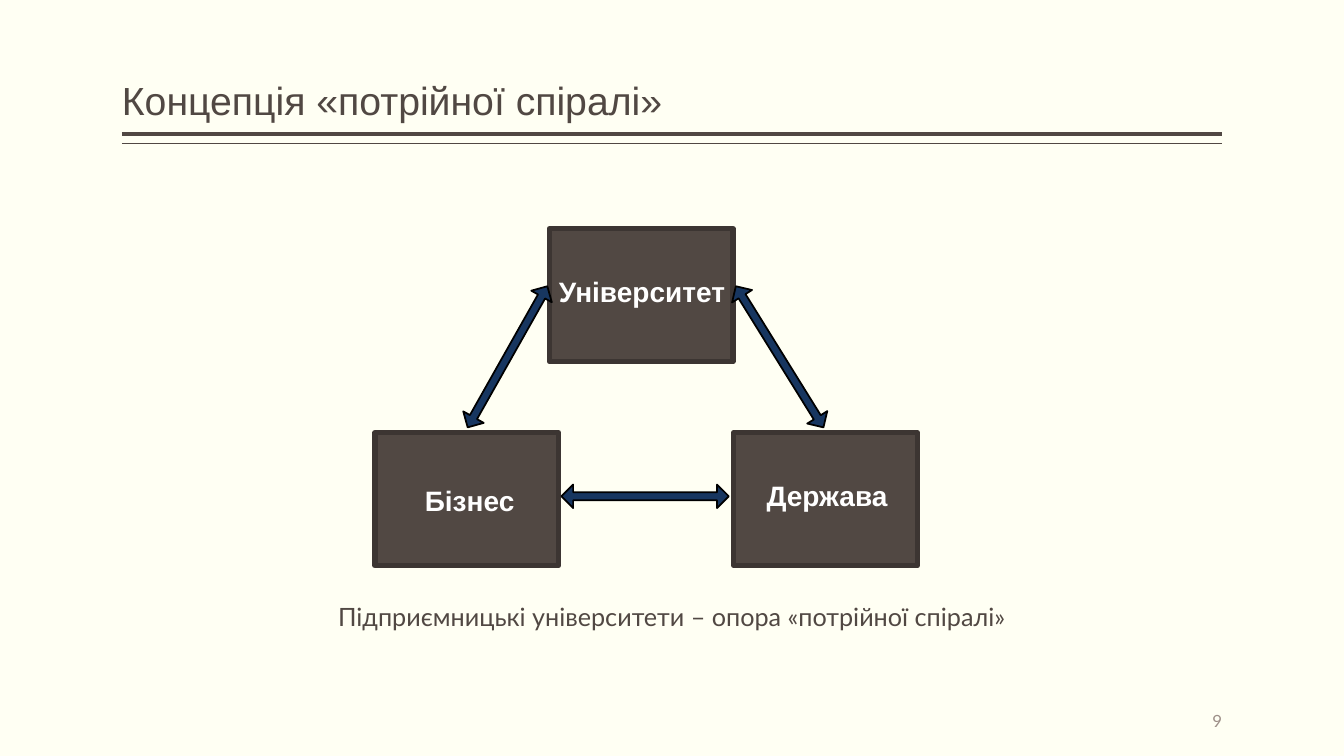
"""Build the triple helix slide: three institutions joined by double arrows."""
import math
from dataclasses import dataclass

from lxml import etree
from pptx import Presentation
from pptx import util as u
from pptx.dml.color import RGBColor
from pptx.enum import shapes, text
from pptx.oxml.ns import qn


@dataclass(frozen=True)
class Theme:
    paper: str = "FFFFF3"
    ink: str = "514843"
    edge: str = "3C3532"
    arrow: str = "173660"
    outline: str = "000000"
    light: str = "FFFFFF"
    muted: str = "9D8F88"
    heading: str = "Arial"
    body: str = "Lato"
    title_size: float = 28
    label_size: float = 20
    caption_size: float = 18
    number_size: float = 12


def apply(target, values):
    for name, value in values.items():
        setattr(target, name, value)


class HelixSlide:
    def __init__(self, deck, theme):
        self.theme = theme
        self.slide = deck.slides.add_slide(deck.slide_layouts[5])
        self.paint(self.slide.background.fill, theme.paper)

    def paint(self, fill, color):
        fill.solid()
        fill.fore_color.rgb = RGBColor.from_string(color)

    def stroke(self, line, color, width):
        self.paint(line.fill, color)
        line.width = u.Pt(width)

    def typeset(self, frame, words, size, color, font, align, bold=False,
                spacing=None, **frame_format):
        apply(frame, frame_format)
        paragraph = frame.paragraphs[0]
        apply(paragraph, {"alignment": align, "line_spacing": spacing})
        run = paragraph.add_run()
        run.text = words
        apply(run.font, {"size": u.Pt(size), "name": font, "bold": bold})
        run.font.color.rgb = RGBColor.from_string(color)

    def title(self, words, left, top, width, height):
        heading = self.slide.shapes.title
        apply(heading, {"left": u.Pt(left), "top": u.Pt(top),
                        "width": u.Pt(width), "height": u.Pt(height)})
        self.typeset(heading.text_frame, words, self.theme.title_size,
                     self.theme.ink, self.theme.heading, text.PP_ALIGN.LEFT,
                     spacing=0.9, margin_left=0, margin_right=0,
                     word_wrap=True, vertical_anchor=text.MSO_ANCHOR.BOTTOM,
                     auto_size=text.MSO_AUTO_SIZE.NONE)

    def rule(self, left, right, y, width):
        divider = self.slide.shapes.add_connector(
            shapes.MSO_CONNECTOR.STRAIGHT, *map(u.Pt, (left, y, right, y)))
        self.stroke(divider.line, self.theme.ink, width)
        etree.SubElement(divider.element.spPr, qn("a:effectLst"))

    def box(self, left, top, width, height):
        institution = self.slide.shapes.add_shape(
            shapes.MSO_SHAPE.RECTANGLE, *map(u.Pt, (left, top, width, height)))
        institution.shadow.inherit = False
        self.paint(institution.fill, self.theme.ink)
        self.stroke(institution.line, self.theme.edge, 3.78)

    def words(self, words, left, top, width, height, **style):
        area = self.slide.shapes.add_textbox(
            *map(u.Pt, (left, top, width, height)))
        self.typeset(area.text_frame, words, **style)

    def double_arrow(self, start, end, head=8.4, shaft=2.9):
        (x, y), (end_x, end_y) = start, end
        length = math.dist(start, end)
        along_x, along_y = (end_x - x) / length, (end_y - y) / length
        side = [(0, 0), (head, head), (head, shaft),
                (length - head, shaft), (length - head, head), (length, 0)]
        profile = side + [(run, -rise) for run, rise in side[-2:0:-1]]
        corners = [(u.Pt(x + run * along_x - rise * along_y),
                    u.Pt(y + run * along_y + rise * along_x))
                   for run, rise in profile]
        outline = self.slide.shapes.build_freeform(*corners[0])
        outline.add_line_segments(corners[1:], close=True)
        link = outline.convert_to_shape()
        link.shadow.inherit = False
        self.paint(link.fill, self.theme.arrow)
        self.stroke(link.line, self.theme.outline, 1.25)


def main():
    deck = Presentation()
    apply(deck, {"slide_width": u.Pt(960), "slide_height": u.Pt(540)})
    theme = Theme()
    helix = HelixSlide(deck, theme)
    left, right = 87.1, 873

    helix.title("Концепція «потрійної спіралі»", left, 5.8, right - left, 86.4)
    for y, width in ((95.8, 3), (102.6, 1)):
        helix.rule(left, right, y, width)

    for box_left, box_top in ((524.2, 309), (267.8, 309), (392.4, 163.4)):
        helix.box(box_left, box_top, 131.2, 95)

    for name, name_left, name_top, name_width in (
            ("Бізнес", 303.1, 345.6, 64.8),
            ("Університет", 398.9, 195.8, 119.5),
            ("Держава", 547.2, 342, 87.1)):
        helix.words(name, name_left, name_top, name_width, 24.5,
                    size=theme.label_size, color=theme.light,
                    font=theme.heading, align=text.PP_ALIGN.CENTER, bold=True,
                    margin_left=0, margin_right=0, margin_top=0,
                    margin_bottom=0, word_wrap=False,
                    auto_size=text.MSO_AUTO_SIZE.SHAPE_TO_FIT_TEXT)

    for start, end in (((391, 204.5), (334.1, 305.3)),
                       ((401, 354.5), (520.6, 354.5)),
                       ((525.6, 204.5), (588.2, 305.3))):
        helix.double_arrow(start, end)

    helix.words("Підприємницькі університети – опора «потрійної спіралі»",
                229.7, 426.2, 500.4, 28.8,
                size=theme.caption_size, color=theme.ink, font=theme.body,
                align=text.PP_ALIGN.CENTER, word_wrap=True,
                auto_size=text.MSO_AUTO_SIZE.SHAPE_TO_FIT_TEXT)
    helix.words("9", right - 144, 500.4, 144, 28.8,
                size=theme.number_size, color=theme.muted, font=theme.body,
                align=text.PP_ALIGN.RIGHT, margin_left=0, margin_right=0,
                word_wrap=True, vertical_anchor=text.MSO_ANCHOR.MIDDLE)
    deck.save("out.pptx")


if __name__ == "__main__":
    main()
